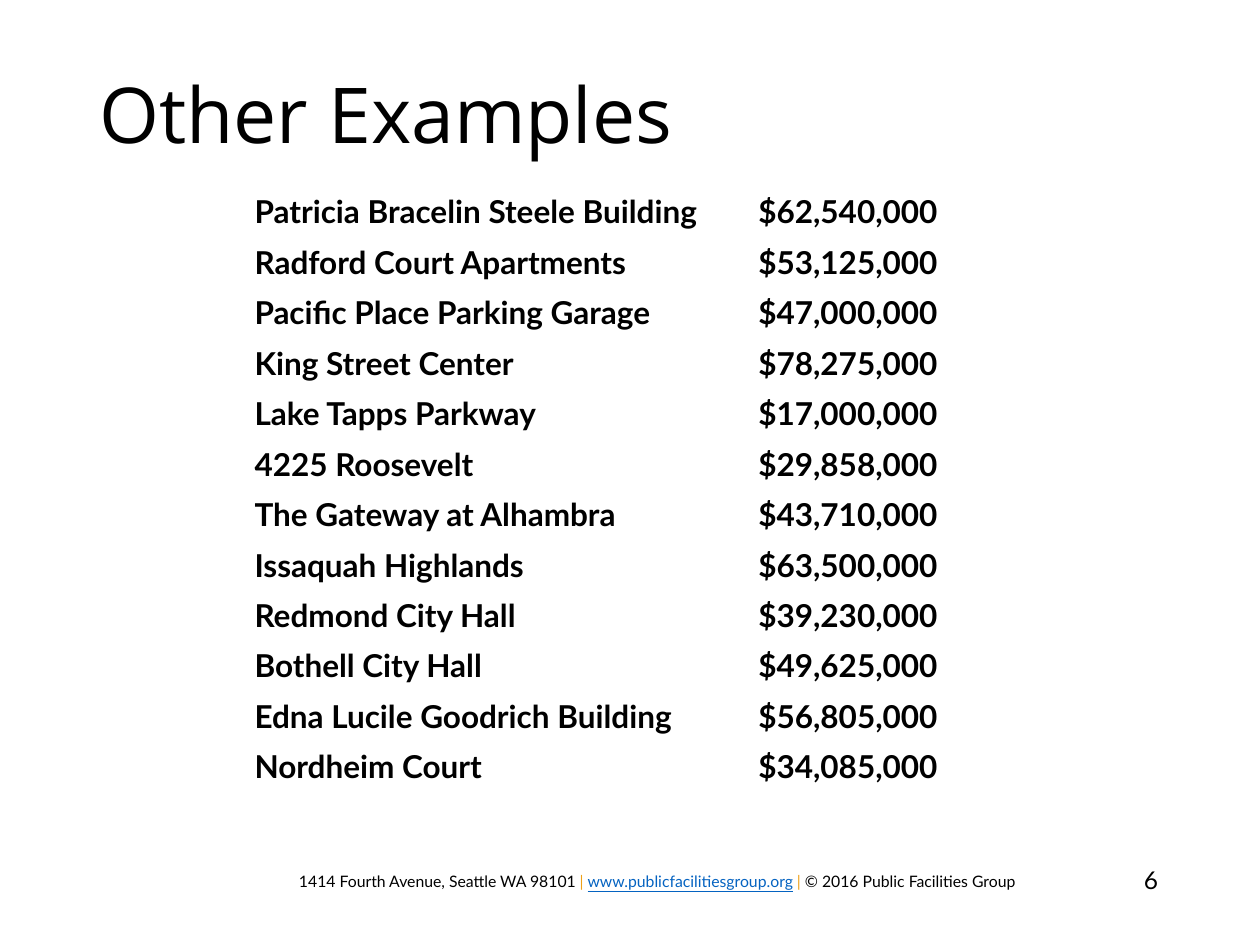
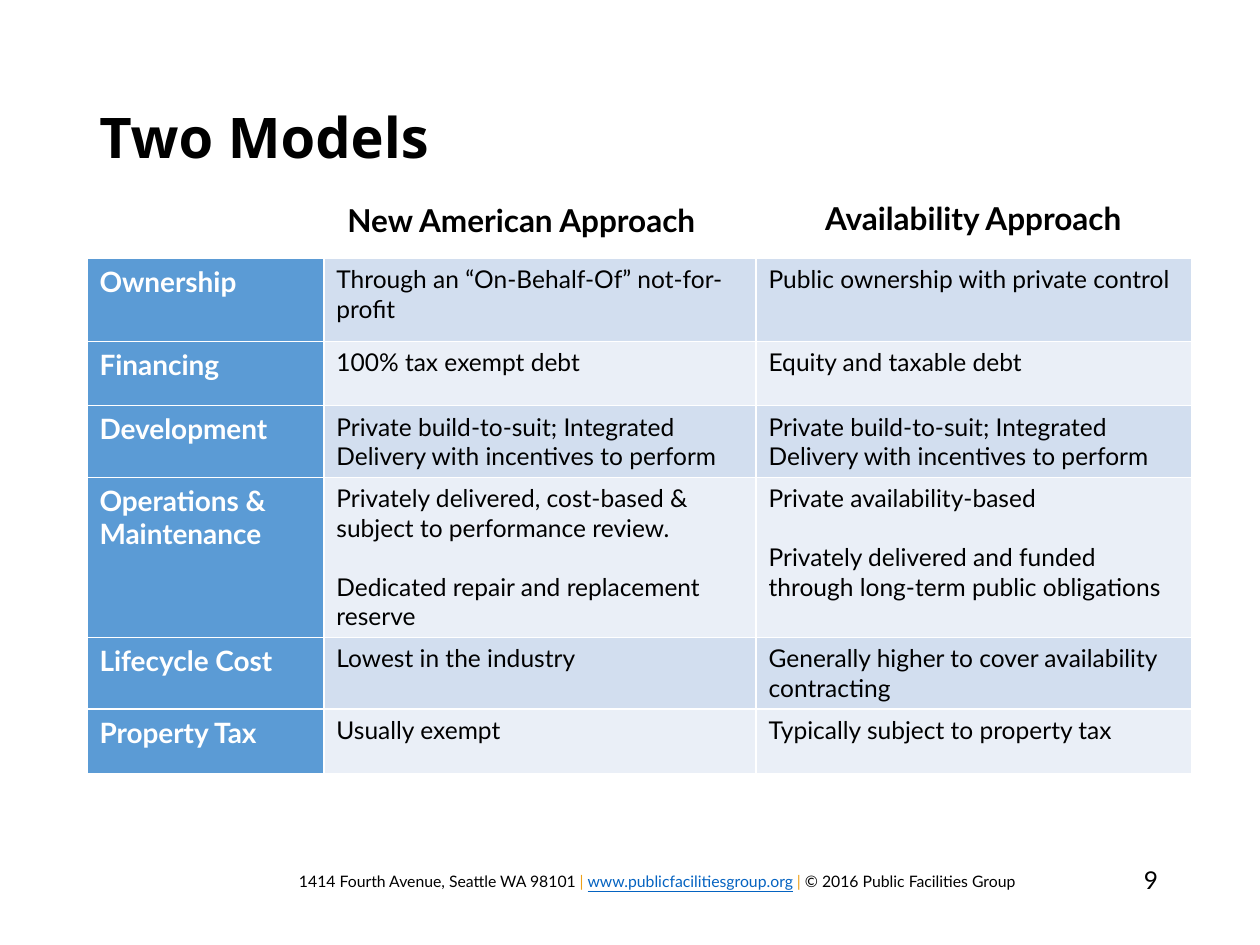
from dataclasses import dataclass

from lxml import etree
from pptx import Presentation
from pptx.dml.color import RGBColor
from pptx.enum.text import MSO_ANCHOR, PP_ALIGN
from pptx.oxml.ns import qn
from pptx.util import Inches, Pt

LEFT, CENTER, RIGHT = PP_ALIGN.LEFT, PP_ALIGN.CENTER, PP_ALIGN.RIGHT
TOP, MIDDLE, BOTTOM = MSO_ANCHOR.TOP, MSO_ANCHOR.MIDDLE, MSO_ANCHOR.BOTTOM
BLANK_LAYOUT = 6


@dataclass(frozen=True)
class Theme:
    body_font: str = "Lato"
    title_font: str = "Open Sans"
    black: str = "000000"
    white: str = "FFFFFF"
    amber: str = "EFA016"
    link: str = "0563C1"
    label_fill: str = "5B9BD5"
    band_fills: tuple[str, str] = ("D2DEEF", "EAEFF7")
    footer_size: int = 9
    body_size: int = 14
    label_size: int = 16
    heading_size: int = 18
    border_width: int = 1


THEME = Theme()


@dataclass(frozen=True)
class Box:
    left: float
    top: float
    width: float
    height: float

    def inches(self) -> tuple:
        return tuple(Inches(v) for v in (self.left, self.top, self.width, self.height))


@dataclass(frozen=True)
class TextStyle:
    size: int
    bold: bool = False
    color: str = THEME.black
    font: str = THEME.body_font
    align: PP_ALIGN = LEFT


@dataclass(frozen=True)
class ModelRow:
    label: str
    new_american: str
    availability: str
    height: float


FOOTER_BOX = Box(2.19, 6.87, 6.05, 0.4)
PAGE_NUMBER_BOX = Box(8.27, 6.82, 1.02, 0.34)
FOOTER_RUNS = [
    ("1414 Fourth Avenue, Seattle WA 98101", THEME.black),
    (" | ", THEME.amber),
    ("www.publicfacilitiesgroup.org", THEME.link),
    (" | ", THEME.amber),
    ("© 2016 Public Facilities Group", THEME.black),
]

HEADING = TextStyle(THEME.heading_size, bold=True)
CENTERED_HEADING = TextStyle(THEME.heading_size, bold=True, align=CENTER)
AMOUNT = TextStyle(THEME.heading_size, bold=True, align=RIGHT)
ROW_LABEL = TextStyle(THEME.label_size, bold=True, color=THEME.white)
BODY = TextStyle(THEME.body_size)
PAGE_NUMBER = TextStyle(THEME.body_size, align=RIGHT)

EXAMPLE_ROW_HEIGHT = 0.4
EXAMPLES = [
    ("Patricia Bracelin Steele Building", "$62,540,000"),
    ("Radford Court Apartments", "$53,125,000"),
    ("Pacific Place Parking Garage", "$47,000,000"),
    ("King Street Center", "$78,275,000"),
    ("Lake Tapps Parkway", "$17,000,000"),
    ("4225 Roosevelt", "$29,858,000"),
    ("The Gateway at Alhambra", "$43,710,000"),
    ("Issaquah Highlands", "$63,500,000"),
    ("Redmond City Hall", "$39,230,000"),
    ("Bothell City Hall", "$49,625,000"),
    ("Edna Lucile Goodrich Building", "$56,805,000"),
    ("Nordheim Court", "$34,085,000"),
]

BUILD_TO_SUIT = "Private build-to-suit; Integrated Delivery with incentives to perform"
MODEL_ROWS = [
    ModelRow("Ownership", "Through an “On-Behalf-Of” not-for-profit",
             "Public ownership with private control", 0.66),
    ModelRow("Financing", "100% tax exempt debt", "Equity and taxable debt", 0.51),
    ModelRow("Development", BUILD_TO_SUIT, BUILD_TO_SUIT, 0.57),
    ModelRow("Operations & Maintenance",
             "Privately delivered, cost-based & subject to performance review.\n"
             "Dedicated repair and replacement reserve",
             "Private availability-based\n"
             "Privately delivered and funded through long-term public obligations", 1.27),
    ModelRow("Lifecycle Cost", "Lowest in the industry",
             "Generally higher to cover availability contracting", 0.57),
    ModelRow("Property Tax", "Usually exempt", "Typically subject to property tax", 0.51),
]


def style_paragraph(paragraph, style: TextStyle) -> None:
    paragraph.alignment = style.align
    font = paragraph.font
    font.name = style.font
    font.size = Pt(style.size)
    font.bold = style.bold
    font.color.rgb = RGBColor.from_string(style.color)


def write_text(text_frame, text: str, style: TextStyle) -> None:
    """Write one paragraph per line, set one text line apart."""
    text_frame.text = text
    for index, paragraph in enumerate(text_frame.paragraphs):
        style_paragraph(paragraph, style)
        if index:
            paragraph.space_before = Pt(style.size * 1.2)


def add_text(slide, box: Box, text: str, style: TextStyle, anchor: MSO_ANCHOR = TOP):
    text_frame = slide.shapes.add_textbox(*box.inches()).text_frame
    text_frame.word_wrap = True
    text_frame.vertical_anchor = anchor
    write_text(text_frame, text, style)
    return text_frame


def add_footer(slide, page: int) -> None:
    text_frame = add_text(slide, FOOTER_BOX, "",
                          TextStyle(THEME.footer_size, align=CENTER), BOTTOM)
    text_frame.margin_bottom = Inches(0.2)
    for text, color in FOOTER_RUNS:
        run = text_frame.paragraphs[0].add_run()
        run.text = text
        run.font.color.rgb = RGBColor.from_string(color)
        run.font.underline = color == THEME.link
    add_text(slide, PAGE_NUMBER_BOX, str(page), PAGE_NUMBER)


def add_titled_slide(presentation, title: str, height: float, size: int,
                     bold: bool, page: int):
    slide = presentation.slides.add_slide(presentation.slide_layouts[BLANK_LAYOUT])
    add_footer(slide, page)
    style = TextStyle(size, bold, font=THEME.title_font)
    title_frame = add_text(slide, Box(0.69, 0.4, 8.62, height), title, style, MIDDLE)
    title_frame.paragraphs[0].line_spacing = 0.9
    return slide


def add_borders(cell) -> None:
    properties = cell._tc.get_or_add_tcPr()
    for side in ("a:lnL", "a:lnR", "a:lnT", "a:lnB"):
        line = etree.SubElement(properties, qn(side), w=str(Pt(THEME.border_width)))
        fill = etree.SubElement(line, qn("a:solidFill"))
        etree.SubElement(fill, qn("a:srgbClr"), val=THEME.white)


def fill_cell(cell, text: str, style: TextStyle, fill: str) -> None:
    add_borders(cell)
    cell.fill.solid()
    cell.fill.fore_color.rgb = RGBColor.from_string(fill)
    write_text(cell.text_frame, text, style)


def add_grid(slide, left: float, top: float, widths: list[float], heights: list[float]):
    box = Box(left, top, sum(widths), sum(heights))
    table = slide.shapes.add_table(len(heights), len(widths), *box.inches()).table
    table.first_row = table.horz_banding = False
    for column, width in zip(table.columns, widths):
        column.width = Inches(width)
    for row, height in zip(table.rows, heights):
        row.height = Inches(height)
    return table


def build_examples(presentation) -> None:
    slide = add_titled_slide(presentation, "Other Examples", 1.08, 44, False, 6)
    table = add_grid(slide, 1.92, 1.48, [3.85, 1.77], [EXAMPLE_ROW_HEIGHT] * len(EXAMPLES))
    for row, (name, amount) in enumerate(EXAMPLES):
        fill_cell(table.cell(row, 0), name, HEADING, THEME.white)
        fill_cell(table.cell(row, 1), amount, AMOUNT, THEME.white)


def build_models(presentation) -> None:
    slide = add_titled_slide(presentation, "Two Models", 1.42, 32, True, 9)
    table = add_grid(slide, 0.69, 2.05, [1.88, 3.43, 3.46],
                     [model.height for model in MODEL_ROWS])
    for row, model in enumerate(MODEL_ROWS):
        band = THEME.band_fills[row % 2]
        fill_cell(table.cell(row, 0), model.label, ROW_LABEL, THEME.label_fill)
        fill_cell(table.cell(row, 1), model.new_american, BODY, band)
        fill_cell(table.cell(row, 2), model.availability, BODY, band)
    add_text(slide, Box(2.66, 1.55, 3.26, 0.4), "New American Approach", HEADING)
    add_text(slide, Box(6.1, 1.53, 3.25, 0.4), "Availability Approach", CENTERED_HEADING)


def main() -> None:
    presentation = Presentation()
    presentation.slide_width = Inches(10)
    presentation.slide_height = Inches(7.5)
    build_examples(presentation)
    build_models(presentation)
    presentation.save("out.pptx")


if __name__ == "__main__":
    main()
